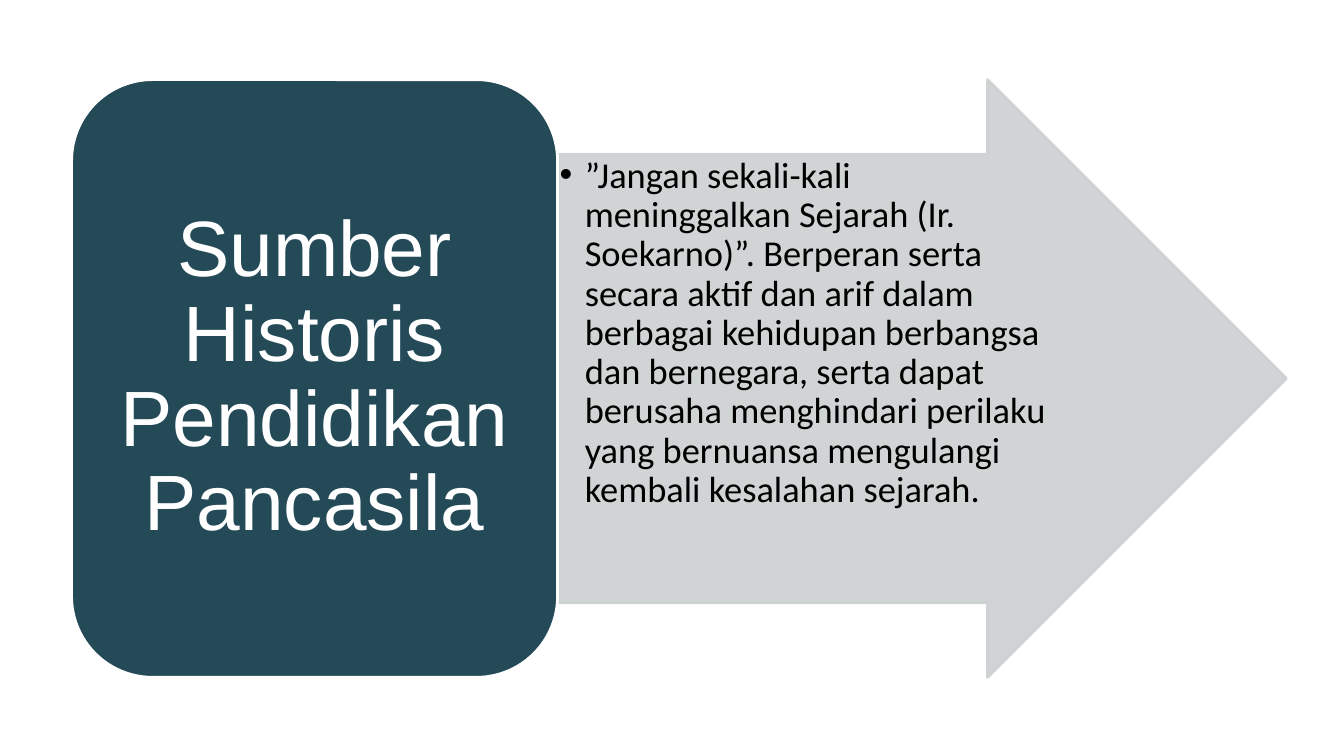
"""Build a slide with a topic panel and an arrow that holds its explanation."""
from lxml import etree
from pptx import Presentation
from pptx.dml.color import RGBColor
from pptx.enum.shapes import MSO_SHAPE
from pptx.enum.text import MSO_ANCHOR, PP_ALIGN
from pptx.oxml.ns import qn
from pptx.util import Inches, Pt

ARROW, PANEL = MSO_SHAPE.RIGHT_ARROW, MSO_SHAPE.ROUNDED_RECTANGLE
TOP, MIDDLE = MSO_ANCHOR.TOP, MSO_ANCHOR.MIDDLE
LEFT, CENTER = PP_ALIGN.LEFT, PP_ALIGN.CENTER

TOPIC = "Sumber Historis Pendidikan Pancasila"
EXPLANATION = (
    "”Jangan sekali-kali meninggalkan Sejarah (Ir. Soekarno)”. "
    "Berperan serta secara aktif dan arif dalam berbagai kehidupan "
    "berbangsa dan bernegara, serta dapat berusaha menghindari perilaku "
    "yang bernuansa mengulangi kembali kesalahan sejarah."
)

SLIDE_WIDTH, SLIDE_HEIGHT = 13.33, 7.5
MARGIN, BAND_TOP, BAND_HEIGHT = 0.71, 0.79, 5.93
BAND_WIDTH, PANEL_SHARE = 12.05, 0.4
PANEL_WIDTH = BAND_WIDTH * PANEL_SHARE
ARROW_WIDTH = BAND_WIDTH - PANEL_WIDTH
TEXT_WIDTH, TEXT_HEIGHT = 5.01, 4.44
TEXT_TOP = BAND_TOP + (BAND_HEIGHT - TEXT_HEIGHT) / 2
INDENT = 0.25


def color(hex_text):
    """Turn a hex string into a colour."""
    return RGBColor.from_string(hex_text)


def set_alpha(fill, percent):
    """Make a solid fill partly transparent."""
    value = fill._xPr.find(qn("a:solidFill"))[0]
    etree.SubElement(value, qn("a:alpha")).set("val", str(percent * 1000))


def add_bullet(para):
    """Give a paragraph a hanging round bullet."""
    props = para._p.get_or_add_pPr()
    props.set("marL", str(Inches(INDENT)))
    props.set("indent", str(-Inches(INDENT)))
    etree.SubElement(props, qn("a:buFont")).set("typeface", "Arial")
    etree.SubElement(props, qn("a:buChar")).set("char", "•")


def add_block(page, kind, left, width, fill, line):
    """Add a filled shape as tall as the band."""
    block = page.shapes.add_shape(
        kind, Inches(left), Inches(BAND_TOP), Inches(width), Inches(BAND_HEIGHT))
    block.shadow.inherit = False
    block.fill.solid()
    block.fill.fore_color.rgb = color(fill)
    block.line.color.rgb = color(line)
    block.line.width = Pt(2)
    return block


def write(block, text, font, size, ink, align, anchor, insets):
    """Write one formatted paragraph into a shape and return it."""
    frame = block.text_frame
    frame.word_wrap = True
    frame.vertical_anchor = anchor
    (frame.margin_left, frame.margin_top,
     frame.margin_right, frame.margin_bottom) = map(Inches, insets)
    frame.text = text
    para = frame.paragraphs[0]
    para.alignment = align
    para.line_spacing = 0.9
    span = para.runs[0].font
    span.name, span.size, span.color.rgb = font, Pt(size), color(ink)
    return para


def main():
    """Build and save the deck."""
    deck = Presentation()
    deck.slide_width, deck.slide_height = Inches(SLIDE_WIDTH), Inches(SLIDE_HEIGHT)
    page = deck.slides.add_slide(deck.slide_layouts[6])

    arrow_left = MARGIN + PANEL_WIDTH
    arrow = add_block(page, ARROW, arrow_left, ARROW_WIDTH, "CDD0D1", "CDD0D1")
    arrow.adjustments[0], arrow.adjustments[1] = 0.75, 0.5
    set_alpha(arrow.fill, 90)
    set_alpha(arrow.line.fill, 90)
    box = page.shapes.add_textbox(
        Inches(arrow_left), Inches(TEXT_TOP), Inches(TEXT_WIDTH), Inches(TEXT_HEIGHT))
    para = write(box, EXPLANATION, "Calibri", 26, "000000", LEFT, TOP, (0.02,) * 4)
    add_bullet(para)

    panel = add_block(page, PANEL, MARGIN, PANEL_WIDTH, "244A58", "FFFFFF")
    write(panel, TOPIC, "Arial", 56, "FFFFFF", CENTER, MIDDLE,
          (0.23, 0.12, 0.23, 0.12))

    deck.save("out.pptx")


if __name__ == "__main__":
    main()
